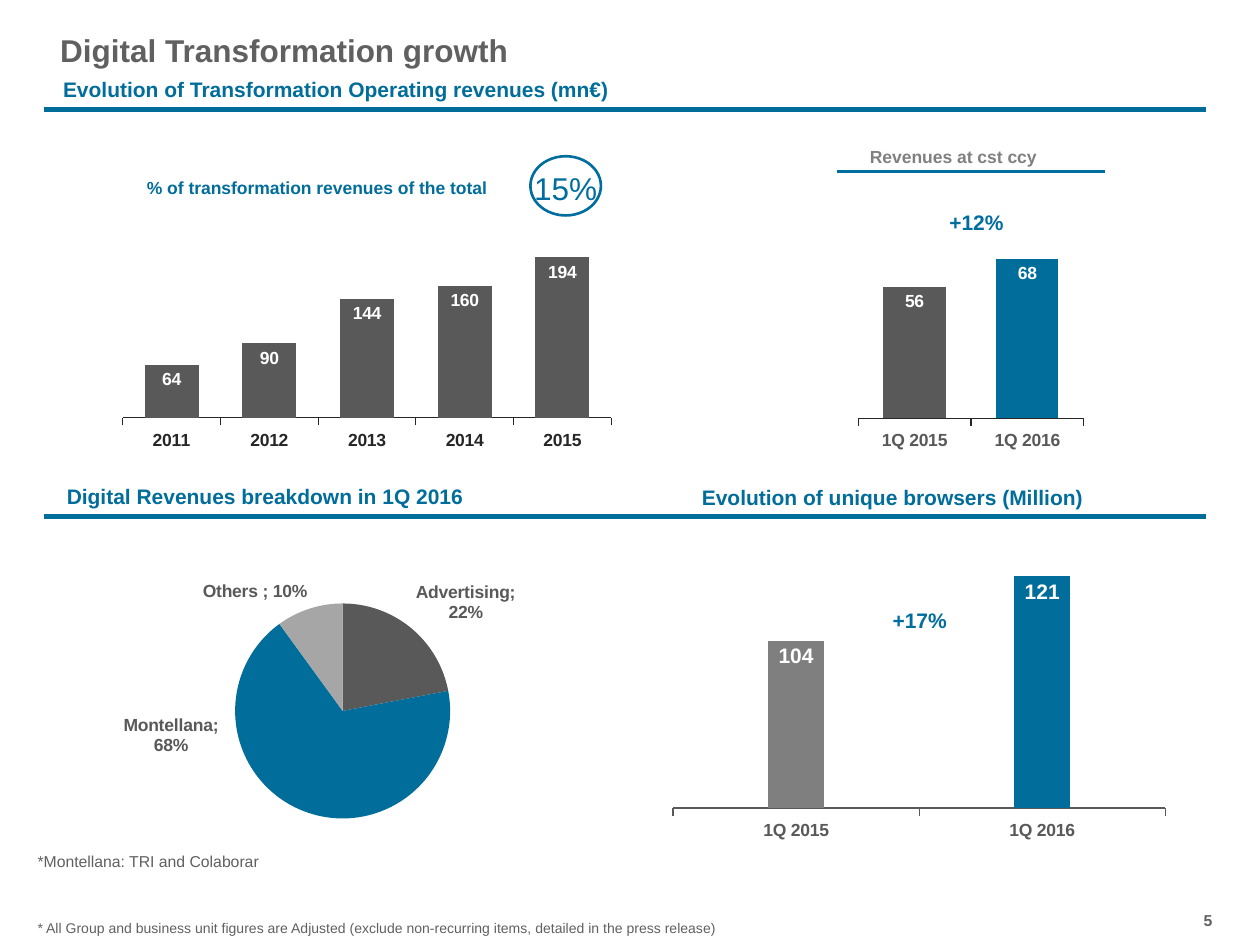
from copy import deepcopy
from dataclasses import dataclass

from lxml import etree
from pptx import Presentation
from pptx.chart.data import CategoryChartData
from pptx.dml.color import RGBColor
from pptx.enum.chart import XL_CHART_TYPE, XL_LABEL_POSITION, XL_TICK_MARK
from pptx.enum.shapes import MSO_CONNECTOR, MSO_SHAPE
from pptx.enum.text import MSO_ANCHOR, PP_ALIGN
from pptx.oxml import parse_xml
from pptx.oxml.ns import nsdecls, qn
from pptx.util import Emu, Pt

BARS, PIE = XL_CHART_TYPE.COLUMN_CLUSTERED, XL_CHART_TYPE.PIE
IN_END, OUT_END = XL_LABEL_POSITION.INSIDE_END, XL_LABEL_POSITION.OUTSIDE_END
TICK_OUT, TICK_NONE = XL_TICK_MARK.OUTSIDE, XL_TICK_MARK.NONE
LEFT, MID, RIGHT = PP_ALIGN.LEFT, PP_ALIGN.CENTER, PP_ALIGN.RIGHT
TOP, CENTER = MSO_ANCHOR.TOP, MSO_ANCHOR.MIDDLE
LINE, OVAL, RECT = MSO_CONNECTOR.STRAIGHT, MSO_SHAPE.OVAL, MSO_SHAPE.RECTANGLE
SCALE = 9144  # 100 px to the inch


@dataclass(frozen=True)
class Theme:
    font: str = "Arial"
    blue: str = "006D9B"
    accent: str = "006D9F"
    text: str = "606060"
    dark: str = "595959"
    black: str = "262626"
    mid: str = "7F7F7F"
    soft: str = "808080"
    pale: str = "A6A6A6"
    white: str = "FFFFFF"
    title: int = 18
    head: int = 12
    label: int = 10
    note: int = 9
    small: int = 8


T = Theme()


def px(*nums):
    return [Emu(n * SCALE) for n in nums]


def rgb(code):
    return RGBColor.from_string(code)


def style(font, size, color, bold=True):
    font.name, font.size, font.bold = T.font, Pt(size), bold
    font.color.rgb = rgb(color)


def write(frame, words, size, color, bold=True, align=LEFT):
    para = frame.paragraphs[0]
    para.alignment = align
    run = para.add_run()
    run.text = words
    style(run.font, size, color, bold)
    return para


def text(slide, box, words, size, color, bold=True, align=LEFT, anchor=TOP):
    frame = slide.shapes.add_textbox(*px(*box)).text_frame
    frame.word_wrap = True
    frame.vertical_anchor = anchor
    if anchor == CENTER:
        frame.margin_left = frame.margin_right = 0
    write(frame, words, size, color, bold, align)


def rule(slide, x, y, wide, color, weight):
    line = slide.shapes.add_connector(LINE, *px(x, y, x + wide, y))
    line.line.color.rgb = rgb(color)
    line.line.width = Pt(weight)
    etree.SubElement(line._element.spPr, qn("a:effectLst"))


def heading(slide, box, words):
    """One-cell table that holds a section heading."""
    table = slide.shapes.add_table(1, 1, *px(*box)).table
    cell = table.cell(0, 0)
    cell.fill.background()
    write(cell.text_frame, words, T.head, T.blue)


def layout(x, y, wide=None, high=None):
    """Manual layout: a plot area with a size, or the shift of a label."""
    parts = '<c:layoutTarget val="inner"/>' if wide else ""
    if wide:
        parts += '<c:xMode val="edge"/><c:yMode val="edge"/>'
    for tag, val in zip("xywh", (x, y, wide, high)):
        if val is not None:
            parts += f'<c:{tag} val="{val}"/>'
    return parse_xml(f'<c:layout {nsdecls("c")}><c:manualLayout>{parts}'
                     "</c:manualLayout></c:layout>")


def shift(tags, i, dx, dy):
    """Move the label of point i, without a leader line."""
    root = tags._element
    lead = root.find(qn("c:showLeaderLines"))
    if lead is None:
        lead = etree.SubElement(root, qn("c:showLeaderLines"))
    lead.set("val", "0")
    label = parse_xml(f'<c:dLbl {nsdecls("c")}><c:idx val="{i}"/></c:dLbl>')
    label.append(layout(dx, dy))
    for part in root:
        if part is not lead:
            label.append(deepcopy(part))
    root.insert(0, label)


def graph(slide, box, kind, cats, vals, colors, plot, fmt="#,##0"):
    data = CategoryChartData()
    data.categories = cats
    data.add_series("Series 1", vals)
    chart = slide.shapes.add_chart(kind, *px(*box), data).chart
    chart.has_legend = chart.has_title = False
    style(chart.font, T.label, T.dark)
    area = chart._chartSpace.chart.plotArea
    for old in area.findall(qn("c:layout")):
        area.remove(old)
    area.insert(0, layout(*plot))
    body = chart.plots[0]
    body.vary_by_categories = kind == PIE
    series = body.series[0]
    for i, color in enumerate(colors):
        fill = series.points[i].format.fill
        fill.solid()
        fill.fore_color.rgb = rgb(color)
    tags = series.data_labels
    tags.show_value = True
    tags.number_format, tags.number_format_is_linked = fmt, False
    return chart, tags


def columns(slide, box, cats, vals, colors, plot, limits, gap, overlap,
            ink=T.dark, size=T.label, axis=T.black):
    chart, tags = graph(slide, box, BARS, cats, vals, colors, plot)
    body = chart.plots[0]
    body.gap_width, body.overlap = gap, overlap
    tags.position = IN_END
    style(tags.font, size, T.white)
    side = chart.value_axis
    side.minimum_scale, side.maximum_scale = limits
    side.has_major_gridlines = side.visible = False
    base = chart.category_axis
    base.major_tick_mark, base.minor_tick_mark = TICK_OUT, TICK_NONE
    base.format.line.color.rgb = rgb(axis)
    base.format.line.width = Pt(0.75)
    style(base.tick_labels.font, T.label, ink)


def band(slide, box, heads):
    """Section headings above a rule along the foot of the box."""
    x, y, wide, high = box
    for dx, dy, w, h, words in heads:
        heading(slide, (x + dx, y + dy, w, h), words)
    rule(slide, x, y + high, wide, T.blue, 3)


def header(slide, box):
    x, y, _, _ = box
    text(slide, (x + 3, y, 843, 39), "Digital Transformation growth",
         T.title, T.text)
    band(slide, box, [(5, 37, 937, 39,
                       "Evolution of Transformation Operating revenues (mn€)")])


def yearly(slide, box):
    x, y, wide, high = box
    columns(slide, (x, y + 27, wide, high - 27),
            ["2011", "2012", "2013", "2014", "2015"],
            [64, 90, 144, 160, 194], [T.dark] * 5,
            (0.035, 0.061, 0.939, 0.601), (0, 250), 81, -5, ink=T.black)
    oval = slide.shapes.add_shape(OVAL, *px(x + 338, y, 56, 47))
    oval.shadow.inherit = False
    oval.fill.background()
    oval.line.color.rgb = rgb(T.accent)
    oval.line.width = Pt(1.5)
    text(slide, (x + 331, y + 5, 75, 40), "15%", T.title, T.accent, False)
    label = slide.shapes.add_shape(RECT, *px(x + 15, y + 3, 307, 35))
    label.shadow.inherit = False
    label.fill.solid()
    label.fill.fore_color.rgb = rgb(T.white)
    label.line.fill.background()
    label.text_frame.vertical_anchor = TOP
    para = write(label.text_frame, "% of transformation revenues of the total",
                 T.label, T.blue, align=MID)
    para.line_spacing = 1.5


def quarter(slide, box):
    x, y, _, high = box
    columns(slide, (x + 28, y + 45, 184, high - 45), ["1Q 2015", "1Q 2016"],
            [56, 68], [T.dark, T.blue], (0.017, 0.134, 0.973, 0.705),
            (0, 80), 81, -5)
    text(slide, (x, y, 213, 29), "Revenues at cst ccy", T.label, T.soft,
         align=MID, anchor=CENTER)
    rule(slide, x + 14, y + 26, 213, T.accent, 1.5)
    text(slide, (x + 86, y + 45, 78, 43), "+12%", T.head, T.accent,
         align=MID, anchor=CENTER)


def split(slide, box):
    _, tags = graph(slide, box, PIE, ["Advertising", "Montellana", "Others "],
                    [0.22, 0.68, 0.1], [T.dark, T.blue, T.pale],
                    (0.271, 0.22, 0.342, 0.569), "0%")
    tags.show_category_name = True
    tags.position = OUT_END
    style(tags.font, T.label, T.dark)
    mark = parse_xml(f'<c:separator {nsdecls("c")}>; </c:separator>')
    tags._element.find(qn("c:showBubbleSize")).addnext(mark)
    shift(tags, 1, -0.13, -0.27)


def browsers(slide, box):
    x, y, _, _ = box
    columns(slide, box, ["1Q 2015", "1Q 2016"], [104, 121], [T.mid, T.blue],
            (0.02, 0.02, 0.96, 0.86), (60, 130), 344, 60,
            size=T.head, axis=T.dark)
    text(slide, (x + 164, y + 53, 80, 29), "+17%", T.head, T.accent,
         align=MID, anchor=CENTER)


def footer(slide, box):
    x, y, wide, _ = box
    text(slide, (x, y, 323, 28), "*Montellana: TRI and Colaborar",
         T.note, T.text, False)
    text(slide, (x, y + 54, 890, 28),
         "* All Group and business unit figures are Adjusted (exclude "
         "non-recurring items, detailed in the press release)",
         T.small, T.text, False)
    text(slide, (x + wide - 39, y + 47, 39, 21), "5", T.note, T.text,
         align=RIGHT)


def main():
    deck = Presentation()
    deck.slide_width, deck.slide_height = px(1000, 750)
    slide = deck.slides.add_slide(deck.slide_layouts[6])
    header(slide, (35, 20, 922, 67))
    yearly(slide, (83, 124, 413, 300))
    quarter(slide, (650, 110, 227, 256))
    split(slide, (51, 413, 500, 300))
    browsers(slide, (526, 425, 407, 246))
    band(slide, (35, 380, 922, 30), [
        (8, 0, 482, 30, "Digital Revenues breakdown in 1Q 2016"),
        (512, 1, 415, 30, "Evolution of unique browsers (Million)")])
    footer(slide, (20, 671, 952, 82))
    deck.save("out.pptx")


if __name__ == "__main__":
    main()
